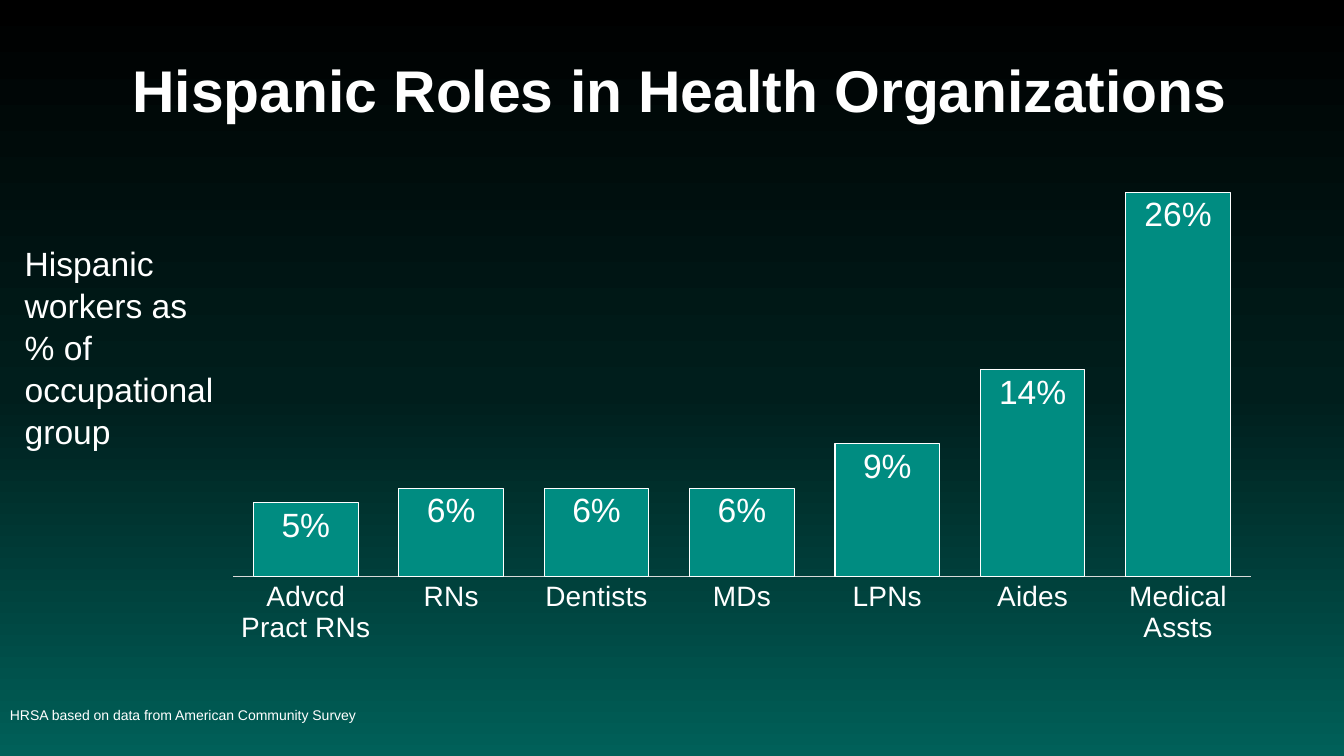
from copy import deepcopy

from lxml.etree import SubElement
from pptx import Presentation
from pptx.chart.data import CategoryChartData
from pptx.dml.color import RGBColor
from pptx.enum.chart import XL_CHART_TYPE as ChartType
from pptx.enum.chart import XL_LABEL_POSITION as LabelPosition
from pptx.enum.chart import XL_TICK_MARK as TickMark
from pptx.enum.text import MSO_ANCHOR as Anchor
from pptx.enum.text import MSO_AUTO_SIZE as AutoSize
from pptx.enum.text import PP_ALIGN as Align
from pptx.oxml.ns import qn
from pptx.util import Inches, Pt

WIDTH, HEIGHT = Inches(13.33), Inches(7.5)
FONT = "Arial"
WHITE = RGBColor(0xFF, 0xFF, 0xFF)
TEAL = RGBColor(0x00, 0x8C, 0x81)
AXIS_GREY = RGBColor(0xD9, 0xD9, 0xD9)
GRADIENT = [
    (0, RGBColor(0x00, 0x00, 0x00)),
    (0.52, RGBColor(0x00, 0x1E, 0x1C)),
    (1, RGBColor(0x00, 0x60, 0x59)),
]
SHARES = {
    "Advcd\nPract RNs": 0.05,
    "RNs": 0.06,
    "Dentists": 0.06,
    "MDs": 0.06,
    "LPNs": 0.09,
    "Aides": 0.14,
    "Medical\nAssts": 0.26,
}
PLOT_AREA = {"x": 0.02, "y": 0.04, "w": 0.98, "h": 0.79}


def share_box(left, top, width, height):
    return (int(left * WIDTH), int(top * HEIGHT),
            int(width * WIDTH), int(height * HEIGHT))


def format_font(font, size, bold=False):
    font.name = FONT
    font.size = Pt(size)
    font.bold = bold
    font.color.rgb = WHITE


def write_text(shape, text, size, bold=False, anchor=Anchor.TOP,
               spacing=0.9, after=0, fit=AutoSize.NONE):
    frame = shape.text_frame
    frame.word_wrap = True
    frame.auto_size = fit
    frame.vertical_anchor = anchor
    para = frame.paragraphs[0]
    para.alignment = Align.LEFT
    para.line_spacing = spacing
    para.space_after = Pt(after)
    span = para.add_run()
    span.text = text
    format_font(span.font, size, bold)


def paint_background(page):
    fill = page.background.fill
    fill.gradient()
    fill.gradient_angle = 270
    stop_list = next(page.element.iter(qn("a:gsLst")))
    stop_list.insert(1, deepcopy(stop_list[0]))
    for stop, (position, color) in zip(fill.gradient_stops, GRADIENT):
        stop.position = position
        stop.color.rgb = color


def add_title(page, box):
    title = page.shapes.title
    title.left, title.top, title.width, title.height = box
    write_text(title, "Hispanic Roles in Health Organizations", 42,
               bold=True, anchor=Anchor.MIDDLE)


def add_measure(page, box):
    write_text(page.shapes.add_textbox(*box),
               "Hispanic workers as % of occupational group", 24,
               spacing=1.04, after=12, fit=AutoSize.SHAPE_TO_FIT_TEXT)


def add_source_line(page, box):
    write_text(page.shapes.add_textbox(*box),
               "HRSA based on data from American Community Survey", 10,
               anchor=Anchor.MIDDLE)


def place_plot(chart):
    plot_area = next(chart.element.iter(qn("c:plotArea")))
    for old in plot_area.findall(qn("c:layout")):
        plot_area.remove(old)
    layout = plot_area.makeelement(qn("c:layout"))
    plot_area.insert(0, layout)
    manual = SubElement(layout, qn("c:manualLayout"))
    settings = {"layoutTarget": "inner", "xMode": "edge", "yMode": "edge"}
    for tag, value in (settings | PLOT_AREA).items():
        SubElement(manual, qn(f"c:{tag}")).set("val", str(value))


def add_role_chart(page, box):
    data = CategoryChartData(number_format="0%")
    data.categories = list(SHARES)
    data.add_series("Series 1", list(SHARES.values()))
    chart = page.shapes.add_chart(
        ChartType.COLUMN_CLUSTERED, *box, data).chart
    format_font(chart.font, 20)
    chart.has_legend = False
    chart.has_title = False
    place_plot(chart)

    roles = chart.category_axis
    roles.major_tick_mark = roles.minor_tick_mark = TickMark.NONE
    roles.format.line.color.rgb = AXIS_GREY
    roles.format.line.width = Pt(0.75)
    format_font(roles.tick_labels.font, 20)

    scale = chart.value_axis
    scale.minimum_scale, scale.maximum_scale = 0, 0.27
    scale.major_unit = 0.05
    scale.has_major_gridlines = False
    scale.visible = False

    plot = chart.plots[0]
    plot.gap_width, plot.overlap = 39, -27
    plot.vary_by_categories = False
    bars = plot.series[0]
    bars.format.fill.solid()
    bars.format.fill.fore_color.rgb = TEAL
    bars.format.line.color.rgb = WHITE
    bars.format.line.width = Pt(0.75)
    labels = bars.data_labels
    labels.show_value = True
    labels.number_format = "0%"
    labels.number_format_is_linked = False
    labels.position = LabelPosition.INSIDE_END
    format_font(labels.font, 24)


def main():
    deck = Presentation()
    deck.slide_width, deck.slide_height = WIDTH, HEIGHT
    page = deck.slides.add_slide(deck.slide_layouts.get_by_name("Title Only"))
    paint_background(page)
    add_source_line(page, share_box(0, 0.893, 0.7, 0.107))
    add_role_chart(page, share_box(0.158, 0.208, 0.773, 0.669))
    add_title(page, share_box(0.091, 0.027, 0.863, 0.193))
    add_measure(page, share_box(0.011, 0.313, 0.159, 0.283))
    deck.save("out.pptx")


if __name__ == "__main__":
    main()
